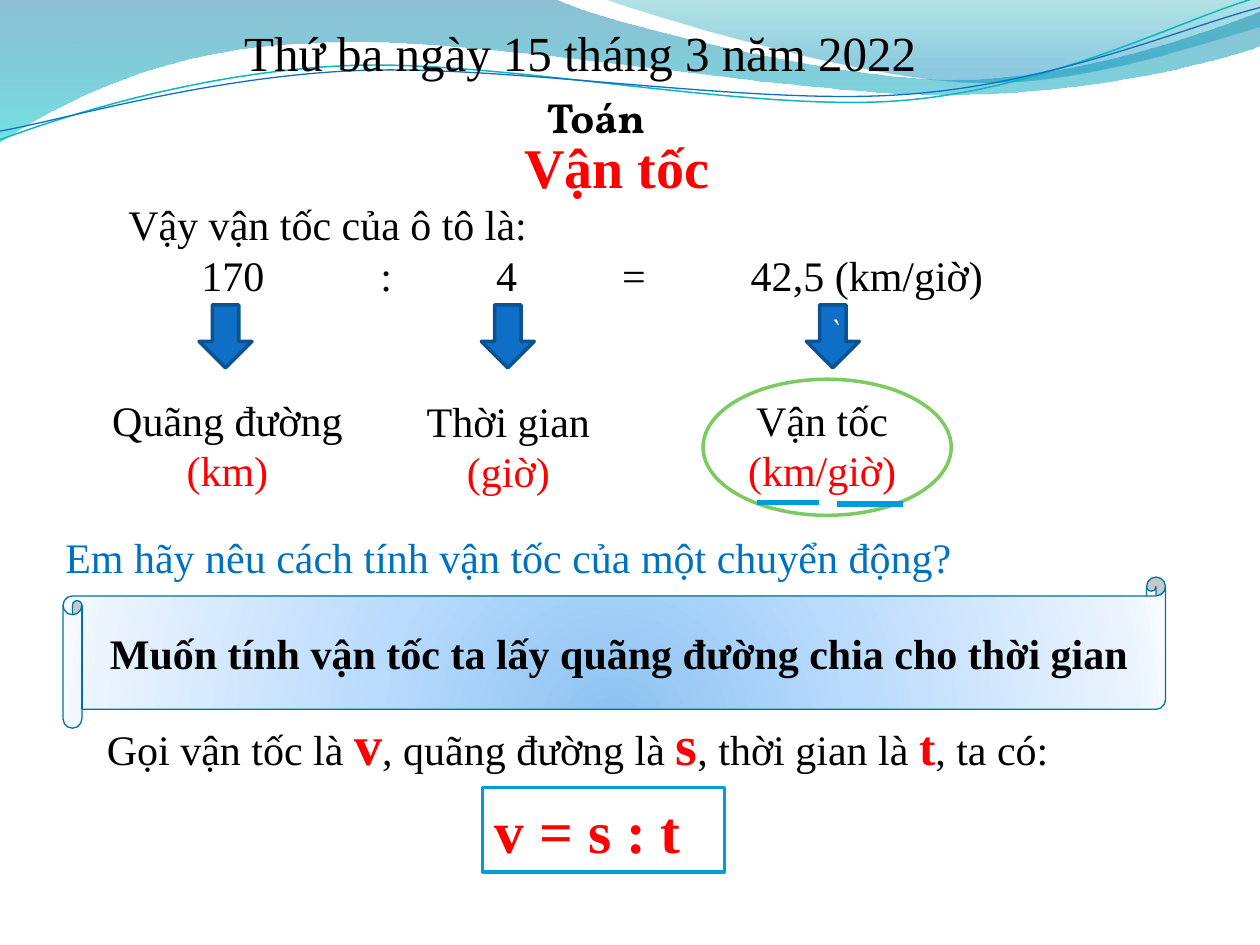
from math import cos, radians, sin

from lxml.etree import SubElement
from pptx import Presentation
from pptx.dml.color import RGBColor
from pptx.enum.shapes import MSO_CONNECTOR, MSO_SHAPE
from pptx.enum.text import MSO_ANCHOR, MSO_AUTO_SIZE, PP_ALIGN
from pptx.oxml.ns import qn
from pptx.util import Inches, Pt

COLUMNS, ROWS = 100, 75
WIDTH, HEIGHT = Inches(10), Inches(7.5)
THREAD_TILT = 2.7

BLACK = RGBColor(0x00, 0x00, 0x00)
WHITE = RGBColor(0xFF, 0xFF, 0xFF)
RED = RGBColor(0xFF, 0x00, 0x00)
QUESTION_BLUE = RGBColor(0x00, 0x70, 0xC0)
ARROW_BLUE = RGBColor(0x0F, 0x6F, 0xC6)
ARROW_EDGE = RGBColor(0x0B, 0x52, 0x92)
SKY = RGBColor(0x00, 0x9D, 0xD9)
GREEN = RGBColor(0x7C, 0xCA, 0x62)
TEAL = RGBColor(0x0A, 0xB8, 0xBF)
DEEP_BLUE = RGBColor(0x00, 0x74, 0xA1)
CYAN = RGBColor(0x00, 0xC6, 0xCF)
SEA = RGBColor(0x00, 0xA1, 0xA9)
OCEAN = RGBColor(0x00, 0x8B, 0xBF)
SCROLL_STOPS = [
    (0, RGBColor(0x8B, 0xC2, 0xF1), 100),
    (43, RGBColor(0xB9, 0xDB, 0xFD), 100),
    (93, RGBColor(0xEA, 0xF3, 0xFE), 100),
    (100, RGBColor(0xF8, 0xFB, 0xFF), 100),
]

NORMAL = {"name": "Times New Roman", "size": Pt(24), "bold": False, "color": BLACK}
UNIT = {**NORMAL, "color": RED}
STRONG = {**NORMAL, "bold": True}
SYMBOL = {**STRONG, "size": Pt(32), "color": RED}
SUBJECT = {**STRONG, "name": "Vollkorn"}

WAVES = [
    ((0, 0), [
        [(44, -0.1)],
        [(47.6, 1.7), (66.4, 6.3), (75.8, 6.3)],
        [(85.3, 6.3), (95.8, 2.6), (100, 0.9)],
        [(100.1, 3.6)],
        [(98.3, 4.4), (87, 7.6), (74.6, 7.5)],
        [(62.2, 7.5), (38.2, 2.8), (25.7, 3.4)],
        [(12.9, 3.6), (4.6, 8.3), (-0.1, 11.3)],
    ], [(0, DEEP_BLUE, 45), (100, CYAN, 55)]),
    ((47.9, -0.1), [
        [(50.9, 1.1), (68.2, 6.2), (76.9, 6.5)],
        [(85.6, 6.9), (96.1, 3.2), (100, 2.1)],
        [(100, 0)],
    ], [(0, SEA, 30), (80, OCEAN, 45)]),
]
THREADS = [
    ((0, 11.1), [
        [(4.8, 9.3), (15.8, 5.7), (27.7, 5.2)],
        [(39.5, 4.7), (59.3, 8.9), (71.3, 8)],
        [(83.3, 7.1), (93.8, 1.5), (99.8, -0.2)],
    ], (49.9, 5.75), {"color": TEAL, "width": Pt(0.85)}),
    ((0, 10.4), [
        [(4.7, 9.6), (16.4, 6.1), (28.3, 5.6)],
        [(40.3, 5.1), (59.7, 8.4), (71.7, 7.5)],
        [(83.6, 6.7), (94.1, 2.1), (100, 0.6)],
    ], (49.95, 5.9), {"color": ARROW_BLUE, "width": Pt(0.75)}),
]


def across(columns):
    return round(WIDTH * columns / COLUMNS)


def down(rows):
    return round(HEIGHT * rows / ROWS)


def place(left, top, width, height):
    return across(left), down(top), across(width), down(height)


def turn(point, center):
    angle = radians(THREAD_TILT)
    x, y = point[0] - center[0], point[1] - center[1]
    return (center[0] + x * cos(angle) - y * sin(angle),
            center[1] + x * sin(angle) + y * cos(angle))


def style_line(shape, color, width):
    shape.line.color.rgb = color
    shape.line.width = width


def fill_gradient(shape, stops, circular=False):
    shape.fill.gradient()
    gradient = shape._element.spPr.find(qn("a:gradFill"))
    for child in list(gradient):
        gradient.remove(child)
    stop_list = SubElement(gradient, qn("a:gsLst"))
    for position, color, opacity in stops:
        stop = SubElement(stop_list, qn("a:gs"), pos=str(position * 1000))
        color_element = SubElement(stop, qn("a:srgbClr"), val=str(color))
        if opacity < 100:
            SubElement(color_element, qn("a:alpha"), val=str(opacity * 1000))
    if circular:
        gradient_path = SubElement(gradient, qn("a:path"), path="circle")
        SubElement(gradient_path, qn("a:fillToRect"), l="50000", t="130000", r="50000", b="-30000")
    else:
        SubElement(gradient, qn("a:lin"), ang="5400000", scaled="1")


def bend_segments(shape, segments):
    line_elements = iter(list(shape._element.spPr.iter(qn("a:lnTo"))))
    for segment in segments:
        corners = [next(line_elements) for _ in segment]
        if len(corners) == 3:
            curve = SubElement(corners[0].getparent(), qn("a:cubicBezTo"))
            corners[0].addprevious(curve)
            for corner in corners:
                curve.append(corner[0])
                corner.getparent().remove(corner)


def add_curve(slide, start, segments, closed):
    points = [(across(x), down(y)) for x, y in [start, *sum(segments, [])]]
    builder = slide.shapes.build_freeform(*points[0], scale=1.0)
    builder.add_line_segments(points[1:], close=closed)
    shape = builder.convert_to_shape()
    bend_segments(shape, segments)
    shape.shadow.inherit = False
    shape.fill.background()
    shape.line.fill.background()
    return shape


def write_text(shape, lines, alignment=PP_ALIGN.LEFT, wrap=True, anchor=MSO_ANCHOR.TOP):
    frame = shape.text_frame
    settings = {"word_wrap": wrap, "vertical_anchor": anchor, "auto_size": MSO_AUTO_SIZE.NONE}
    for name, value in settings.items():
        setattr(frame, name, value)
    for index, line in enumerate(lines):
        paragraph = frame.paragraphs[0] if index == 0 else frame.add_paragraph()
        paragraph.alignment = alignment
        for text, style in line:
            run = paragraph.add_run()
            run.text = text
            for name, value in style.items():
                if name == "color":
                    run.font.color.rgb = value
                else:
                    setattr(run.font, name, value)
    return frame


def add_text(slide, box, lines, **options):
    return write_text(slide.shapes.add_textbox(*place(*box)), lines, **options)


def add_preset(slide, kind, box, line_color, line_width, fill=None):
    shape = slide.shapes.add_shape(kind, *place(*box))
    shape.shadow.inherit = False
    if fill is None:
        shape.fill.background()
    else:
        shape.fill.solid()
        shape.fill.fore_color.rgb = fill
    style_line(shape, line_color, Pt(line_width))
    return shape


def set_tab_stops(paragraph, stops):
    tab_list = SubElement(paragraph._p.get_or_add_pPr(), qn("a:tabLst"))
    for stop in stops:
        SubElement(tab_list, qn("a:tab"), pos=str(across(stop)), algn="l")


def add_underline(slide, left, right, row):
    connector = slide.shapes.add_connector(
        MSO_CONNECTOR.STRAIGHT, across(left), down(row), across(right), down(row))
    style_line(connector, SKY, Pt(3))
    SubElement(connector._element.spPr, qn("a:effectLst"))


def add_background(slide):
    for start, segments, stops in WAVES:
        fill_gradient(add_curve(slide, start, segments, True), stops)
    for start, segments, center, line in THREADS:
        level = [[turn(point, center) for point in segment] for segment in segments]
        thread = add_curve(slide, turn(start, center), level, False)
        thread.rotation = 360 - THREAD_TILT
        style_line(thread, **line)


def add_headings(slide):
    title = slide.shapes.title
    title.left, title.top, title.width, title.height = place(40.6, 10, 16.9, 6.4)
    write_text(title, [[("Vận tốc", SYMBOL)]], wrap=False)
    add_text(slide, (18.4, 1.3, 87.7, 5.7),
             [[("Thứ ba ngày 15 tháng 3 năm 2022", {**NORMAL, "size": Pt(28)})]])
    add_text(slide, (42.4, 6.8, 18, 5), [[("Toán", SUBJECT)]])


def add_calculation(slide):
    frame = add_text(slide, (9.2, 15.3, 70.6, 9.1), [
        [("Vậy vận tốc của ô tô là:", NORMAL)],
        [("\t170\t:\t4\t=\t42,5 (km/giờ)", NORMAL)],
    ])
    set_tab_stops(frame.paragraphs[1], (5.8, 20, 29.2, 39.2, 49.4))
    quantities = [
        (15.8, "", (7.8, 30.8, 20.5, 9.1), "Quãng đường", "(km)"),
        (38.2, "", (32.8, 30.9, 15.1, 9.1), "Thời gian", "(giờ)"),
        (64, "`", (58.3, 30.8, 13.9, 9.1), "Vận tốc", "(km/giờ)"),
    ]
    for arrow_left, mark, box, quantity, unit in quantities:
        arrow = add_preset(slide, MSO_SHAPE.DOWN_ARROW, (arrow_left, 24.2, 4.2, 5),
                           ARROW_EDGE, 2, ARROW_BLUE)
        if mark:
            mark_style = {"name": "Vollkorn", "size": Pt(18), "color": WHITE}
            write_text(arrow, [[(mark, mark_style)]], alignment=PP_ALIGN.CENTER,
                       anchor=MSO_ANCHOR.MIDDLE)
        add_text(slide, box, [[(quantity, NORMAL)], [(unit, UNIT)]],
                 alignment=PP_ALIGN.CENTER, wrap=False)
    add_preset(slide, MSO_SHAPE.OVAL, (55.8, 30.1, 19.7, 10.8), GREEN, 2)
    add_underline(slide, 60.1, 65, 39.9)
    add_underline(slide, 66.4, 71.7, 40)


def add_rule(slide):
    scroll = add_preset(slide, MSO_SHAPE.HORIZONTAL_SCROLL, (5, 45.8, 87.5, 12), DEEP_BLUE, 0.75)
    fill_gradient(scroll, SCROLL_STOPS, circular=True)
    write_text(scroll, [[("Muốn tính vận tốc ta lấy quãng đường chia cho thời gian", STRONG)]],
               alignment=PP_ALIGN.CENTER, anchor=MSO_ANCHOR.MIDDLE)
    question = {**NORMAL, "color": QUESTION_BLUE}
    add_text(slide, (4.2, 41.7, 80, 5),
             [[("Em hãy nêu cách tính vận tốc của một chuyển động?", question)]])
    add_text(slide, (7.5, 55.8, 80, 6.4), [[
        ("Gọi vận tốc là ", NORMAL), ("v", SYMBOL), (", quãng đường là ", NORMAL), ("s", SYMBOL),
        (", thời gian là ", NORMAL), ("t", {**SYMBOL, "size": Pt(28)}), (", ta có:", NORMAL),
    ]])
    formula = add_preset(slide, MSO_SHAPE.RECTANGLE, (38.3, 62.5, 19.2, 6.7), SKY, 2, WHITE)
    write_text(formula, [[("v = s : t", {**SYMBOL, "size": Pt(34)})]])


def main():
    presentation = Presentation()
    presentation.slide_width, presentation.slide_height = WIDTH, HEIGHT
    slide = presentation.slides.add_slide(presentation.slide_layouts[5])
    for add_part in (add_background, add_headings, add_calculation, add_rule):
        add_part(slide)
    presentation.save("out.pptx")


if __name__ == "__main__":
    main()
